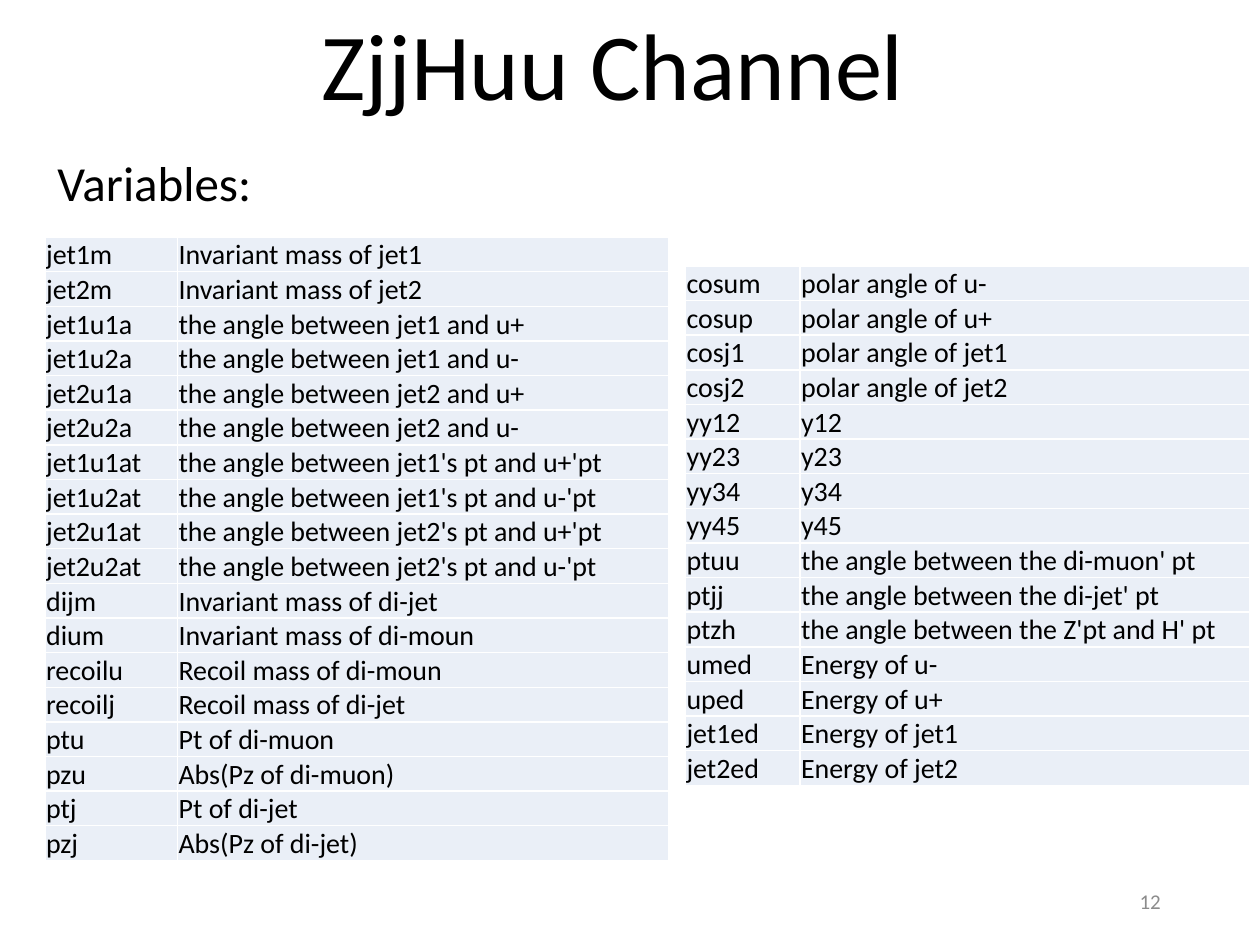
import dataclasses

import lxml.etree
import pptx
import pptx.dml.color
import pptx.enum.text
import pptx.oxml.ns
import pptx.util

Cm = pptx.util.Cm
Pt = pptx.util.Pt
ALIGN = pptx.enum.text.PP_ALIGN
ANCHOR = pptx.enum.text.MSO_ANCHOR
qn = pptx.oxml.ns.qn


@dataclasses.dataclass(frozen=True)
class Theme:
    font: str = "Calibri"
    text: str = "000000"
    muted: str = "8C8C8C"
    cell: str = "EAEFF7"
    border: str = "FFFFFF"
    title_size: int = 54
    heading_size: int = 28
    table_size: int = 16
    number_size: int = 12


class SlideBuilder:
    def __init__(self, slide, theme):
        self.slide = slide
        self.theme = theme

    def format_runs(self, p, size, color):
        for r in p.runs:
            r.font.name = self.theme.font
            r.font.size = Pt(size)
            r.font.color.rgb = pptx.dml.color.RGBColor.from_string(color)

    def text(self, text, box, size, color, align=ALIGN.LEFT, anchor=ANCHOR.TOP, wrap=True):
        sp = self.slide.shapes.add_textbox(*map(Cm, box))
        tf = sp.text_frame
        tf.word_wrap = wrap
        tf.vertical_anchor = anchor
        tf.text = text
        p = tf.paragraphs[0]
        p.alignment = align
        self.format_runs(p, size, color)

    def borders(self, cell):
        tc_pr = cell._tc.get_or_add_tcPr()
        for side in ("a:lnL", "a:lnR", "a:lnT", "a:lnB"):
            ln = lxml.etree.SubElement(tc_pr, qn(side), w=str(Pt(1)))
            fill = lxml.etree.SubElement(ln, qn("a:solidFill"))
            lxml.etree.SubElement(fill, qn("a:srgbClr"), val=self.theme.border)

    def table(self, rows, left, top, widths, row_height):
        sp = self.slide.shapes.add_table(
            len(rows), len(widths), Cm(left), Cm(top),
            Cm(sum(widths)), Cm(row_height * len(rows)))
        table = sp.table
        table.first_row = False
        table.horz_banding = False
        for column, width in zip(table.columns, widths):
            column.width = Cm(width)
        for row, texts in zip(table.rows, rows):
            row.height = Cm(row_height)
            for cell, text in zip(row.cells, texts):
                self.cell(cell, text)

    def cell(self, cell, text):
        cell.margin_left = cell.margin_right = cell.margin_top = Cm(0.02)
        cell.margin_bottom = 0
        cell.vertical_anchor = ANCHOR.MIDDLE
        self.borders(cell)
        cell.fill.solid()
        cell.fill.fore_color.rgb = pptx.dml.color.RGBColor.from_string(self.theme.cell)
        cell.text = text
        self.format_runs(cell.text_frame.paragraphs[0], self.theme.table_size, self.theme.text)


JET_VARIABLES = [
    ("jet1m", "Invariant mass of jet1"),
    ("jet2m", "Invariant mass of jet2"),
    ("jet1u1a", "the angle between jet1 and u+"),
    ("jet1u2a", "the angle between jet1 and u-"),
    ("jet2u1a", "the angle between jet2 and u+"),
    ("jet2u2a", "the angle between jet2 and u-"),
    ("jet1u1at", "the angle between jet1's pt and u+'pt"),
    ("jet1u2at", "the angle between jet1's pt and u-'pt"),
    ("jet2u1at", "the angle between jet2's pt and u+'pt"),
    ("jet2u2at", "the angle between jet2's pt and u-'pt"),
    ("dijm", "Invariant mass of di-jet"),
    ("dium", "Invariant mass of di-moun"),
    ("recoilu", "Recoil mass of di-moun"),
    ("recoilj", "Recoil mass of di-jet"),
    ("ptu", "Pt of di-muon"),
    ("pzu", "Abs(Pz of di-muon)"),
    ("ptj", "Pt of di-jet"),
    ("pzj", "Abs(Pz of di-jet)"),
]

ANGLE_VARIABLES = [
    ("cosum", "polar angle of u-"),
    ("cosup", "polar angle of u+"),
    ("cosj1", "polar angle of jet1"),
    ("cosj2", "polar angle of jet2"),
    ("yy12", "y12"),
    ("yy23", "y23"),
    ("yy34", "y34"),
    ("yy45", "y45"),
    ("ptuu", "the angle between the di-muon' pt"),
    ("ptjj", "the angle between the di-jet' pt"),
    ("ptzh", "the angle between the Z'pt and H' pt"),
    ("umed", "Energy of u-"),
    ("uped", "Energy of u+"),
    ("jet1ed", "Energy of jet1"),
    ("jet2ed", "Energy of jet2"),
]


def main():
    prs = pptx.Presentation()
    prs.slide_width, prs.slide_height = Cm(25.4), Cm(19.05)
    theme = Theme()
    s = SlideBuilder(prs.slides.add_slide(prs.slide_layouts[6]), theme)
    row_height = 0.69
    s.text("12", (17.93, 17.65, 5.72, 1.02), theme.number_size, theme.muted,
           align=ALIGN.RIGHT, anchor=ANCHOR.MIDDLE)
    s.table(JET_VARIABLES, 0.91, 4.78, (2.67, 9.91), row_height)
    s.text("ZjjHuu Channel", (6.17, 0, 12.37, 2.57), theme.title_size, theme.text,
           align=ALIGN.CENTER, wrap=False)
    s.text("Variables:", (0.91, 2.95, 11.56, 1.45), theme.heading_size, theme.text)
    s.table(ANGLE_VARIABLES, 13.82, 5.36, (2.31, 9.07), row_height)
    prs.save("out.pptx")


if __name__ == "__main__":
    main()
